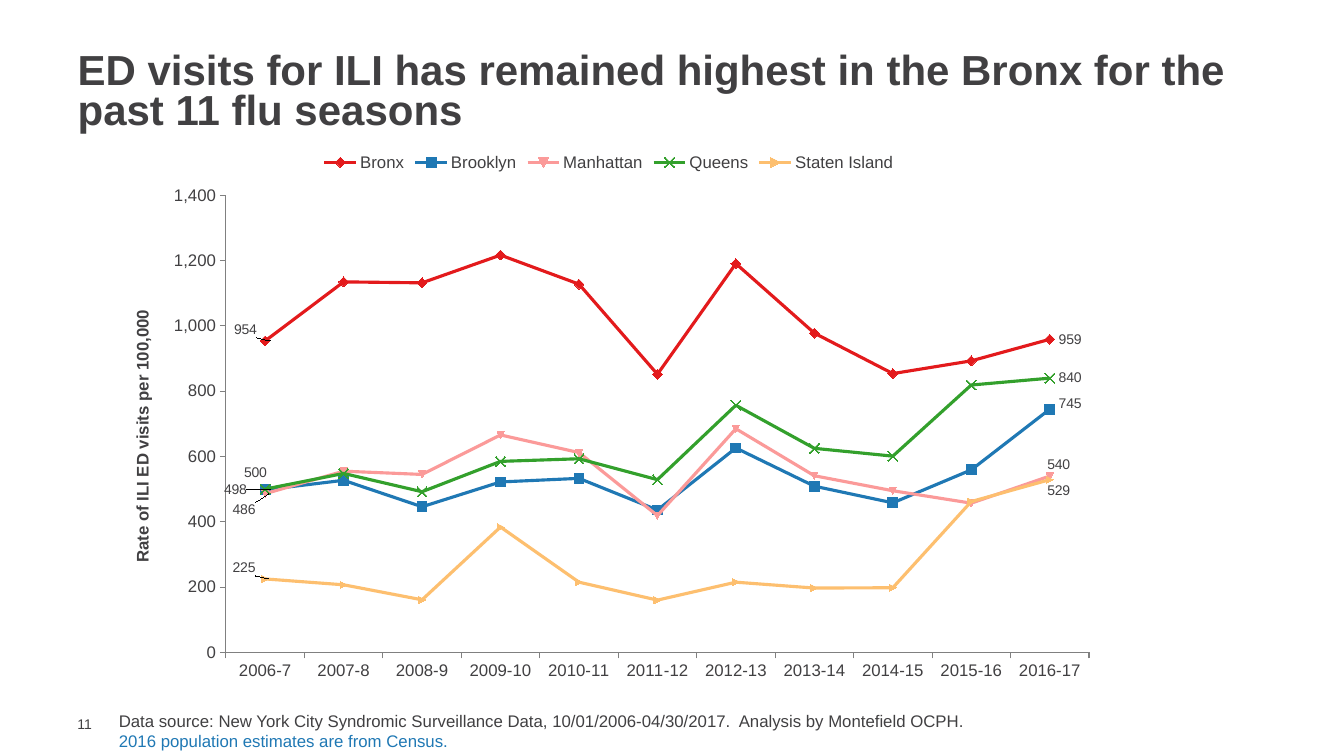
from dataclasses import dataclass

from lxml import etree
from pptx import Presentation
from pptx.chart.data import CategoryChartData
from pptx.dml.color import RGBColor
from pptx.enum.chart import XL_CHART_TYPE, XL_LABEL_POSITION, XL_LEGEND_POSITION, XL_MARKER_STYLE, XL_TICK_MARK
from pptx.enum.text import MSO_ANCHOR, PP_ALIGN
from pptx.oxml import parse_xml
from pptx.oxml.ns import qn
from pptx.util import Inches, Pt

LINE_MARKERS = XL_CHART_TYPE.LINE_MARKERS
LABEL_RIGHT = XL_LABEL_POSITION.RIGHT
LEGEND_TOP = XL_LEGEND_POSITION.TOP
DIAMOND = XL_MARKER_STYLE.DIAMOND
SQUARE = XL_MARKER_STYLE.SQUARE
CROSS = XL_MARKER_STYLE.X
TICK_OUT = XL_TICK_MARK.OUTSIDE
MIDDLE = MSO_ANCHOR.MIDDLE
TOP = MSO_ANCHOR.TOP
LEFT = PP_ALIGN.LEFT

FONT = "Arial"
INK = RGBColor(0x41, 0x40, 0x42)
AXIS_GRAY = RGBColor(0x80, 0x80, 0x80)
RED = RGBColor(0xE3, 0x1A, 0x1C)
BLUE = RGBColor(0x1F, 0x78, 0xB4)
PINK = RGBColor(0xFB, 0x9A, 0x99)
GREEN = RGBColor(0x33, 0xA0, 0x2C)
ORANGE = RGBColor(0xFD, 0xBF, 0x6F)

CHART_NS = "http://schemas.openxmlformats.org/drawingml/2006/chart"
LEADER_LINES = (
    f'<c:extLst xmlns:c="{CHART_NS}">'
    '<c:ext uri="{CE6537A1-D6FC-4f65-9D91-7224C49458BB}" '
    'xmlns:c15="http://schemas.microsoft.com/office/drawing/2012/chart">'
    '<c15:showLeaderLines val="1"/></c:ext></c:extLst>'
)
SEASONS = ["2006-7", "2007-8", "2008-9"] + [f"{y}-{y - 1999}" for y in range(2009, 2017)]


@dataclass
class Borough:
    name: str
    visits: list[int]
    color: RGBColor
    marker: XL_MARKER_STYLE | None
    first_shift: tuple[float, float]
    last_shift: tuple[float, float] = (0, 0)


BOROUGHS = [
    Borough("Bronx", [954, 1135, 1132, 1217, 1128, 852, 1191, 978, 854, 893, 959],
            RED, DIAMOND, (-0.04, -0.02)),
    Borough("Brooklyn", [498, 527, 446, 522, 533, 436, 626, 509, 458, 559, 745],
            BLUE, SQUARE, (-0.05, 0), (0, -0.01)),
    Borough("Manhattan", [486, 555, 545, 666, 612, 419, 685, 541, 495, 457, 540],
            PINK, None, (-0.04, 0.03), (-0.01, -0.02)),
    Borough("Queens", [500, 548, 492, 585, 593, 529, 757, 625, 601, 819, 840],
            GREEN, CROSS, (-0.03, -0.03)),
    Borough("Staten Island", [225, 207, 161, 384, 215, 160, 215, 197, 198, 462, 529],
            ORANGE, None, (-0.04, -0.02), (-0.01, 0.02)),
]


def style_font(font, size: float, color: RGBColor = INK, bold: bool = False) -> None:
    font.name, font.size, font.bold = FONT, Pt(size), bold
    font.color.rgb = color


def add_run(p, text: str, size: float, color: RGBColor = INK, bold: bool = False) -> None:
    r = p.add_run()
    r.text = text
    style_font(r.font, size, color, bold)


def add_text(s, x: float, y: float, w: float, h: float, anchor: MSO_ANCHOR,
             margin: float, size: float, lines: list[tuple[str, RGBColor]]) -> None:
    tf = s.shapes.add_textbox(Inches(x), Inches(y), Inches(w), Inches(h)).text_frame
    tf.word_wrap, tf.vertical_anchor = True, anchor
    tf.margin_top = tf.margin_bottom = Inches(margin)
    for i, (text, color) in enumerate(lines):
        p = tf.add_paragraph() if i else tf.paragraphs[0]
        add_run(p, text, size, color)


def make_layout(**values: float | str):
    layout = etree.Element(qn("c:layout"))
    manual = etree.SubElement(layout, qn("c:manualLayout"))
    for tag, value in values.items():
        etree.SubElement(manual, qn(f"c:{tag}")).set("val", str(value))
    return layout


def place(parent, after: str, layout) -> None:
    for old in parent.findall(qn("c:layout")):
        parent.remove(old)
    parent.find(qn(after)).addnext(layout)


def style_axis(axis) -> None:
    style_font(axis.tick_labels.font, 12)
    axis.has_major_gridlines = False
    axis.major_tick_mark = TICK_OUT
    axis.format.line.color.rgb = AXIS_GRAY
    axis.format.line.width = Pt(0.75)


def style_series(series, borough: Borough) -> None:
    series.smooth = False
    series.format.line.color.rgb = borough.color
    series.format.line.width = Pt(2.25)
    if borough.marker is not None:
        series.marker.style, series.marker.size = borough.marker, 7
        series.marker.format.fill.solid()
        series.marker.format.fill.fore_color.rgb = borough.color
        series.marker.format.line.color.rgb = borough.color
    series.data_labels.show_value = False
    shifts = {0: borough.first_shift, len(SEASONS) - 1: borough.last_shift}
    for i, (dx, dy) in shifts.items():
        label = series.points[i].data_label
        style_font(label.font, 10)
        label.position = LABEL_RIGHT
    labels = series.data_labels._element
    for label, (dx, dy) in zip(labels.findall(qn("c:dLbl")), shifts.values()):
        if dx or dy:
            place(label, "c:idx", make_layout(x=dx, y=dy))
    labels.append(parse_xml(LEADER_LINES))


def add_visits_chart(s) -> None:
    data = CategoryChartData(number_format="General")
    data.categories = SEASONS
    for borough in BOROUGHS:
        data.add_series(borough.name, borough.visits)
    chart = s.shapes.add_chart(LINE_MARKERS, Inches(1.08), Inches(1.41),
                               Inches(9.92), Inches(5.45), data).chart
    style_font(chart.font, 10)
    chart.has_title = False
    chart.has_legend = True
    chart.legend.position = LEGEND_TOP
    chart.legend.include_in_layout = False
    style_font(chart.legend.font, 12)
    style_axis(chart.category_axis)
    axis = chart.value_axis
    style_axis(axis)
    axis.minimum_scale, axis.maximum_scale, axis.major_unit = 0, 1400, 200
    axis.tick_labels.number_format = "#,##0"
    axis.tick_labels.number_format_is_linked = False
    add_run(axis.axis_title.text_frame.paragraphs[0],
            "Rate of ILI ED visits per 100,000", 12, bold=True)
    place(axis.axis_title._element, "c:tx",
          make_layout(xMode="edge", yMode="edge", x=0.02, y=0.3))
    plot = chart.plots[0]
    plot.vary_by_categories = False
    for series, borough in zip(plot.series, BOROUGHS):
        style_series(series, borough)
    area = chart._chartSpace.chart.plotArea
    for old in area.findall(qn("c:layout")):
        area.remove(old)
    area.insert(0, make_layout(layoutTarget="inner", xMode="edge", yMode="edge",
                               x=0.117, y=0.097, w=0.863, h=0.832))


def add_title(s) -> None:
    title = s.shapes.title
    title.left, title.top = Inches(0.67), Inches(0.47)
    title.width, title.height = Inches(12), Inches(0.91)
    tf = title.text_frame
    tf.word_wrap, tf.vertical_anchor = True, MIDDLE
    p = tf.paragraphs[0]
    p.alignment, p.line_spacing = LEFT, 0.8
    add_run(p, "ED visits for ILI has remained highest in the Bronx for the past 11 flu seasons",
            30, bold=True)


def main() -> None:
    prs = Presentation()
    prs.slide_width, prs.slide_height = Inches(13.33), Inches(7.5)
    s = prs.slides.add_slide(prs.slide_layouts[5])
    add_title(s)
    add_visits_chart(s)
    add_text(s, 0.67, 7.1, 0.43, 0.17, MIDDLE, 0, 10, [("11", INK)])
    add_text(s, 1.08, 7, 9.92, 0.5, TOP, 0.05, 12, [
        ("Data source: New York City Syndromic Surveillance Data, "
         "10/01/2006-04/30/2017.  Analysis by Montefield OCPH.", INK),
        ("2016 population estimates are from Census.", BLUE),
    ])
    prs.save("out.pptx")


if __name__ == "__main__":
    main()
